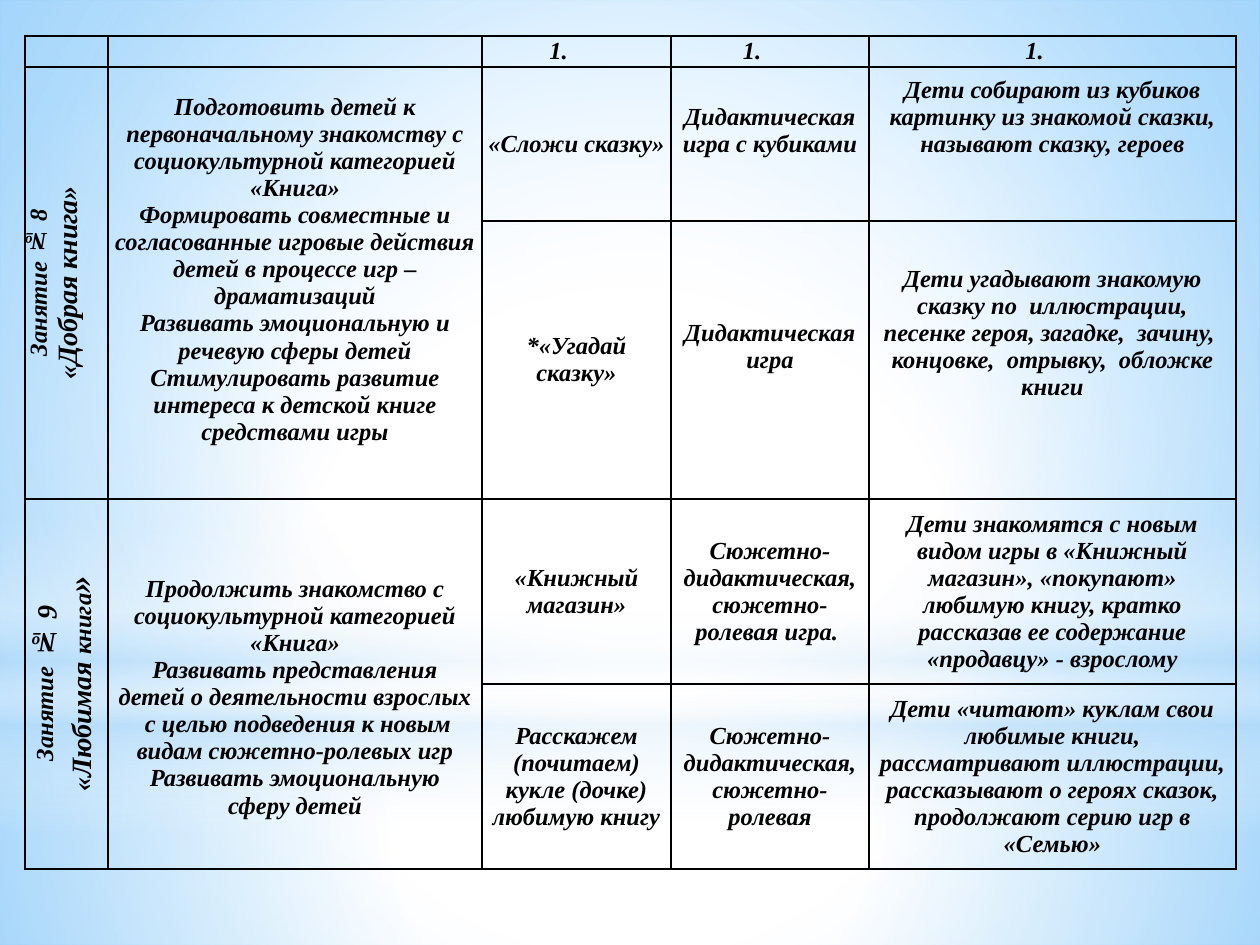
from dataclasses import dataclass
from typing import Sequence

from lxml.etree import SubElement
from pptx import Presentation
from pptx.dml.color import RGBColor
from pptx.enum.shapes import MSO_SHAPE as Shape
from pptx.enum.text import MSO_ANCHOR as Anchor, PP_ALIGN as Align
from pptx.oxml import parse_xml
from pptx.oxml.ns import nsdecls, qn
from pptx.util import Emu, Pt

PX = 914400 / 126
FONT = "Times New Roman"
INK = "000000"
CENTER = (50, 50, 50, 50)
COLUMNS = (83, 374, 189, 198, 367)
ROWS = (31, 154, 278, 185, 185)
LINE = 27


@dataclass(frozen=True)
class Stop:
    position: int
    color: str
    alpha: int = 100


@dataclass(frozen=True)
class Glow:
    kind: Shape
    top: int
    height: int
    stops: Sequence[Stop]
    focus: Sequence[int] | None = CENTER


@dataclass(frozen=True)
class Part:
    text: str
    size: int = 14


@dataclass(frozen=True)
class Entry:
    row: int
    column: int
    lines: Sequence[str | Sequence[Part]]
    side: int = 5
    space_above: int = 0
    space_below: int = 0
    shift: int = 0
    span: int = 1
    vertical: bool = False


GLOWS = (
    Glow(Shape.RECTANGLE, 703, 242, (
        Stop(0, "FFFFFF", 91), Stop(37, "FFFFFF", 76), Stop(100, "B4DCFA", 79))),
    Glow(Shape.RECTANGLE, 0, 703, (
        Stop(0, "FFFFFF", 89), Stop(48, "FFFFFF", 62), Stop(100, "B4DCFA", 79))),
    Glow(Shape.RECTANGLE, 519, 315, (
        Stop(0, "FFFFFF", 0), Stop(29, "FFFFFF", 30), Stop(45, "B4DCFA", 40),
        Stop(55, "FFFFFF", 26), Stop(65, "B4DCFA", 60), Stop(100, "FFFFFF", 0)), None),
    Glow(Shape.OVAL, 220, 703, (Stop(0, "FFFFFF"), Stop(56, "FFFFFF", 0))),
)

ENTRIES = (
    *(Entry(0, column, ("1.",), shift=36) for column in (2, 3, 4)),
    Entry(1, 0, ("Занятие № 8", (Part("«Добрая книга»", 16),)), span=2, vertical=True),
    Entry(1, 1, (
        "Подготовить детей к первоначальному знакомству с социокультурной категорией «Книга»",
        "Формировать совместные и согласованные игровые действия детей в процессе игр – драматизаций",
        "Развивать эмоциональную и речевую сферы детей",
        "Стимулировать развитие интереса к детской книге средствами игры",
    ), space_below=LINE, span=2),
    Entry(1, 2, ("«Сложи сказку»",)),
    Entry(1, 3, ("Дидактическая игра с кубиками",), space_below=LINE),
    Entry(1, 4, (
        "Дети собирают из кубиков картинку из знакомой сказки, называют сказку, героев",
    ), space_below=2 * LINE),
    Entry(2, 2, ("*«Угадай сказку»",)),
    Entry(2, 3, ("Дидактическая игра",), space_below=LINE),
    Entry(2, 4, (
        "Дети угадывают знакомую сказку по  иллюстрации, песенке героя, загадке,  зачину,"
        "  концовке,  отрывку,  обложке книги",
    ), space_below=2 * LINE),
    Entry(3, 0, (
        (Part("Занятие"), Part(" ", 18), Part("№ 9", 16)),
        (Part("«Любимая ", 16), Part("книга"), Part("»", 20)),
    ), side=9, span=2, vertical=True),
    Entry(3, 1, (
        "Продолжить знакомство с социокультурной категорией «Книга»",
        "Развивать представления детей о деятельности взрослых  с целью подведения"
        " к новым видам сюжетно-ролевых игр",
        "Развивать эмоциональную сферу детей",
    ), side=9, space_above=LINE, span=2),
    Entry(3, 2, ("«Книжный магазин»",), side=9),
    Entry(3, 3, ("Сюжетно-дидактическая, сюжетно-ролевая игра. ",), side=9),
    Entry(3, 4, (
        "Дети знакомятся с новым видом игры в «Книжный магазин», «покупают» любимую книгу,"
        " кратко рассказав ее содержание «продавцу» - взрослому",
    ), side=9),
    Entry(4, 2, ("Расскажем (почитаем) кукле (дочке) любимую книгу",), side=9),
    Entry(4, 3, ("Сюжетно-дидактическая, сюжетно-ролевая",), side=9),
    Entry(4, 4, (
        "Дети «читают» куклам свои любимые книги, рассматривают иллюстрации,"
        " рассказывают о героях сказок, продолжают серию игр в «Семью»",
    ), side=9),
)


def px(length: int) -> Emu:
    return Emu(round(length * PX))


def rgb(value: str) -> RGBColor:
    return RGBColor.from_string(value)


def gradient(stops: Sequence[Stop], focus: Sequence[int] | None):
    fill = parse_xml(f'<a:gradFill {nsdecls("a")} rotWithShape="1"><a:gsLst/></a:gradFill>')
    for stop in stops:
        mark = SubElement(fill[0], qn("a:gs"), pos=str(stop.position * 1000))
        color = SubElement(mark, qn("a:srgbClr"), val=stop.color)
        SubElement(color, qn("a:alpha"), val=str(stop.alpha * 1000))
    if focus:
        circle = SubElement(fill, qn("a:path"), path="circle")
        sides = {side: str(value * 1000) for side, value in zip("ltrb", focus)}
        SubElement(circle, qn("a:fillToRect"), **sides)
    else:
        SubElement(fill, qn("a:lin"), ang="5400000", scaled="0")
    return fill


def fill_gradient(owner, element, stops: Sequence[Stop], focus: Sequence[int] | None) -> None:
    owner.fill.solid()
    solid = element.find(".//" + qn("a:solidFill"))
    solid.getparent().replace(solid, gradient(stops, focus))


def draw_glow(slide, glow: Glow) -> None:
    shape = slide.shapes.add_shape(glow.kind, 0, px(glow.top), px(1260), px(glow.height))
    shape.shadow.inherit = False
    shape.line.fill.background()
    fill_gradient(shape, shape._element.spPr, glow.stops, glow.focus)


def prepare_cell(cell) -> None:
    cell.margin_left = cell.margin_right = cell.margin_top = cell.margin_bottom = 0
    cell.vertical_anchor = Anchor.MIDDLE
    properties = cell._tc.get_or_add_tcPr()
    for side in ("lnL", "lnR", "lnT", "lnB"):
        border = SubElement(properties, qn(f"a:{side}"), w=str(Pt(1)))
        SubElement(SubElement(border, qn("a:solidFill")), qn("a:srgbClr"), val=INK)
    cell.fill.background()
    cell.text_frame.paragraphs[0]._p.get_or_add_endParaRPr().set("sz", "1400")


def write_entry(table, entry: Entry) -> None:
    cell = table.cell(entry.row, entry.column)
    if entry.span > 1:
        cell.merge(table.cell(entry.row + entry.span - 1, entry.column))
    cell.margin_left, cell.margin_right = px(entry.side), px(entry.side + entry.shift)
    cell.margin_top, cell.margin_bottom = px(entry.space_above), px(entry.space_below)
    if entry.vertical:
        cell._tc.tcPr.set("vert", "vert270")
    for index, line in enumerate(entry.lines):
        frame = cell.text_frame
        paragraph = frame.add_paragraph() if index else frame.paragraphs[0]
        paragraph.alignment = Align.CENTER
        for part in (Part(line),) if isinstance(line, str) else line:
            run = paragraph.add_run()
            run.text = part.text
            run.font.name, run.font.size = FONT, Pt(part.size)
            run.font.bold = run.font.italic = True
            run.font.color.rgb = rgb(INK)


def draw_plan(slide) -> None:
    table = slide.shapes.add_table(
        len(ROWS), len(COLUMNS), px(25), px(36), px(sum(COLUMNS)), px(sum(ROWS))).table
    table.first_row = table.horz_banding = False
    for column, width in zip(table.columns, COLUMNS):
        column.width = px(width)
    for row, height in zip(table.rows, ROWS):
        row.height = px(height)
    for cell in table.iter_cells():
        prepare_cell(cell)
    for entry in ENTRIES:
        write_entry(table, entry)


def main() -> None:
    deck = Presentation()
    deck.slide_width, deck.slide_height = px(1260), px(945)
    slide = deck.slides.add_slide(deck.slide_layouts[6])
    sky = (Stop(0, "FFFFFF"), Stop(42, "FFFFFF"), Stop(100, "63BCFF"))
    fill_gradient(slide.background, slide._element, sky, (24, 44, 24, 12))
    for glow in GLOWS:
        draw_glow(slide, glow)
    draw_plan(slide)
    deck.save("out.pptx")


if __name__ == "__main__":
    main()
